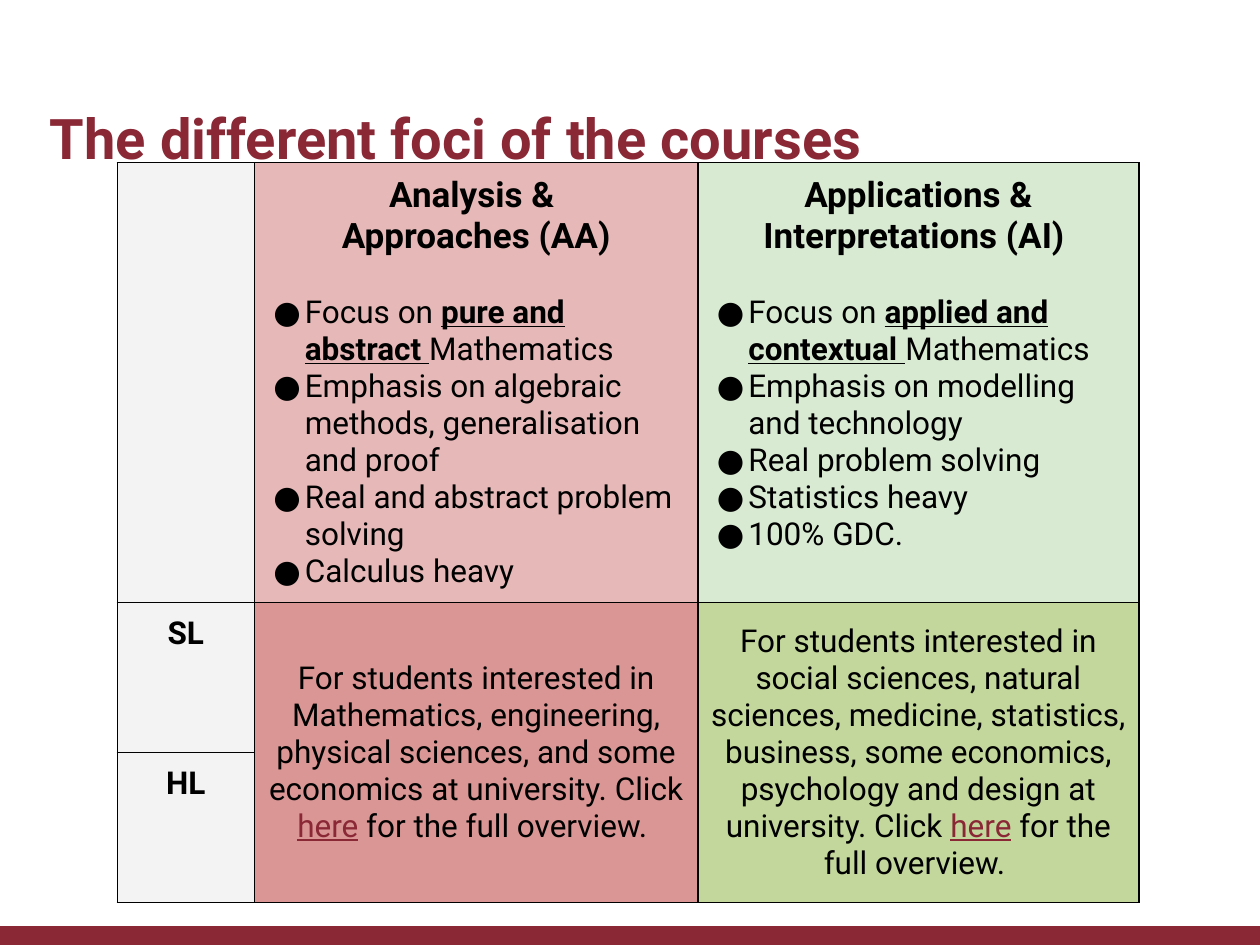
from dataclasses import dataclass
from typing import Any, Optional

from lxml import etree
from pptx import Presentation
from pptx.dml.color import RGBColor
from pptx.enum.shapes import MSO_SHAPE
from pptx.enum.text import MSO_ANCHOR, PP_ALIGN
from pptx.oxml.ns import qn
from pptx.util import Inches, Pt

CENTER, LEFT = PP_ALIGN.CENTER, PP_ALIGN.LEFT
TOP, MIDDLE = MSO_ANCHOR.TOP, MSO_ANCHOR.MIDDLE
RECTANGLE = MSO_SHAPE.RECTANGLE

SLIDE_WIDTH, SLIDE_HEIGHT = Inches(10), Inches(7.5)
FONT = "Roboto"
MAROON, BLACK, GREY = "8A2836", "000000", "F3F3F3"
COLUMN_WIDTHS = (1.09, 3.52, 3.5)
ROW_HEIGHTS = (3.49, 1.19, 1.19)

HEADING = {"size": Pt(20), "bold": True}
BODY = {"size": Pt(18), "bold": False}
LEVEL = {"size": Pt(18), "bold": True}
STRESS = {"size": Pt(18), "bold": True, "underline": True}
REFERENCE = {"size": Pt(18), "bold": False, "underline": True}


@dataclass
class Phrase:
    text: str
    format: dict[str, Any]
    color: str = BLACK


@dataclass
class Line:
    phrases: list[Phrase]
    bullet: bool = False
    gap: float = 0


@dataclass
class Entry:
    row: int
    column: int
    fill: str
    lines: list[Line]
    anchor: Any = TOP
    row_span: int = 1


def rgb(color: str) -> RGBColor:
    return RGBColor.from_string(color)


def apply_format(target: Any, values: dict[str, Any]) -> None:
    for name, value in values.items():
        setattr(target, name, value)


def write_phrase(paragraph: Any, phrase: Phrase) -> None:
    run = paragraph.add_run()
    run.text = phrase.text
    apply_format(run.font, {"name": FONT, **phrase.format})
    run.font.color.rgb = rgb(phrase.color)


def add_bullet(paragraph: Any) -> None:
    properties = paragraph._p.get_or_add_pPr()
    properties.set("marL", str(Inches(0.3)))
    properties.set("indent", str(Inches(-0.25)))
    bullet_color = etree.SubElement(properties, qn("a:buClr"))
    etree.SubElement(bullet_color, qn("a:srgbClr"), val=BLACK)
    etree.SubElement(properties, qn("a:buFont"), typeface=FONT)
    etree.SubElement(properties, qn("a:buChar"), char="●")


def write_line(paragraph: Any, line: Line) -> None:
    if line.bullet:
        add_bullet(paragraph)
    paragraph.alignment = LEFT if line.bullet else CENTER
    if line.gap:
        paragraph.space_before = Pt(line.gap)
    for phrase in line.phrases:
        write_phrase(paragraph, phrase)


def add_borders(cell: Any) -> None:
    properties = cell._tc.get_or_add_tcPr()
    for side in ("lnL", "lnR", "lnT", "lnB"):
        border = etree.SubElement(properties, qn(f"a:{side}"), w=str(Pt(0.75)))
        solid = etree.SubElement(border, qn("a:solidFill"))
        etree.SubElement(solid, qn("a:srgbClr"), val=BLACK)


def fill_entry(table: Any, entry: Entry) -> None:
    cell = table.cell(entry.row, entry.column)
    if entry.row_span > 1:
        cell.merge(table.cell(entry.row + entry.row_span - 1, entry.column))
    margins = {f"margin_{side}": Inches(0.1) for side in ("left", "right", "top", "bottom")}
    apply_format(cell, {"vertical_anchor": entry.anchor, **margins})
    cell.fill.solid()
    cell.fill.fore_color.rgb = rgb(entry.fill)
    for index, line in enumerate(entry.lines):
        frame = cell.text_frame
        write_line(frame.add_paragraph() if index else frame.paragraphs[0], line)


def course_lines(headings: list[str], stress: str, last_word: str, points: list[str]) -> list[Line]:
    focus = [Phrase("Focus on ", BODY), Phrase(stress, STRESS), Phrase(last_word, BODY)]
    return [
        *(Line([Phrase(heading, HEADING)]) for heading in headings),
        Line(focus, bullet=True, gap=21),
        *(Line([Phrase(point, BODY)], bullet=True) for point in points),
    ]


def audience_lines(interests: str) -> list[Line]:
    return [Line([
        Phrase(f"For students interested in {interests} at university. Click ", BODY),
        Phrase("here", REFERENCE, MAROON),
        Phrase(" for the full overview. ", BODY),
    ])]


ENTRIES = [
    Entry(0, 0, GREY, []),
    Entry(0, 1, "E6B9B8", course_lines(
        ["Analysis & ", "Approaches (AA)"], "pure and abstract ", "Mathematics\u00a0",
        ["Emphasis on algebraic methods, generalisation and proof",
         "Real and abstract problem solving", "Calculus heavy"])),
    Entry(0, 2, "D9EAD3", course_lines(
        ["Applications & Interpretations (AI) "], "applied and contextual ", "Mathematics",
        ["Emphasis on modelling and technology", "Real problem solving",
         "Statistics heavy", "100% GDC."])),
    Entry(1, 0, GREY, [Line([Phrase("SL", LEVEL)])]),
    Entry(2, 0, GREY, [Line([Phrase("HL", LEVEL)])]),
    Entry(1, 1, "D99694", audience_lines(
        "Mathematics, engineering, physical sciences, and some economics"), MIDDLE, 2),
    Entry(1, 2, "C3D69B", audience_lines(
        "social sciences, natural sciences, medicine, statistics, business, "
        "some economics, psychology and design"), MIDDLE, 2),
]


def add_footer_bar(slide: Any) -> None:
    height = int(SLIDE_HEIGHT * 0.02)
    bar = slide.shapes.add_shape(RECTANGLE, 0, SLIDE_HEIGHT - height, SLIDE_WIDTH, height)
    bar.shadow.inherit = False
    bar.fill.solid()
    bar.fill.fore_color.rgb = rgb(MAROON)
    bar.line.fill.background()


def add_title(slide: Any) -> None:
    title = slide.shapes.title
    apply_format(title, {"left": Inches(-0.91), "top": Inches(0.56),
                         "width": Inches(9.06), "height": Inches(1.05)})
    title.text_frame.vertical_anchor = MIDDLE
    heading = Phrase("The different foci of the courses", {"size": Pt(32), "bold": True}, MAROON)
    write_line(title.text_frame.paragraphs[0], Line([heading]))


def add_course_table(slide: Any) -> None:
    table = slide.shapes.add_table(
        len(ROW_HEIGHTS), len(COLUMN_WIDTHS), Inches(0.93), Inches(1.29),
        Inches(sum(COLUMN_WIDTHS)), Inches(sum(ROW_HEIGHTS))).table
    apply_format(table, {"first_row": False, "horz_banding": False})
    for column, width in zip(table.columns, COLUMN_WIDTHS):
        column.width = Inches(width)
    for row, height in zip(table.rows, ROW_HEIGHTS):
        row.height = Inches(height)
    for cell in table.iter_cells():
        add_borders(cell)
    for entry in ENTRIES:
        fill_entry(table, entry)


def main() -> None:
    presentation = Presentation()
    apply_format(presentation, {"slide_width": SLIDE_WIDTH, "slide_height": SLIDE_HEIGHT})
    slide = presentation.slides.add_slide(presentation.slide_layouts[5])
    add_footer_bar(slide)
    add_title(slide)
    add_course_table(slide)
    presentation.save("out.pptx")


if __name__ == "__main__":
    main()
